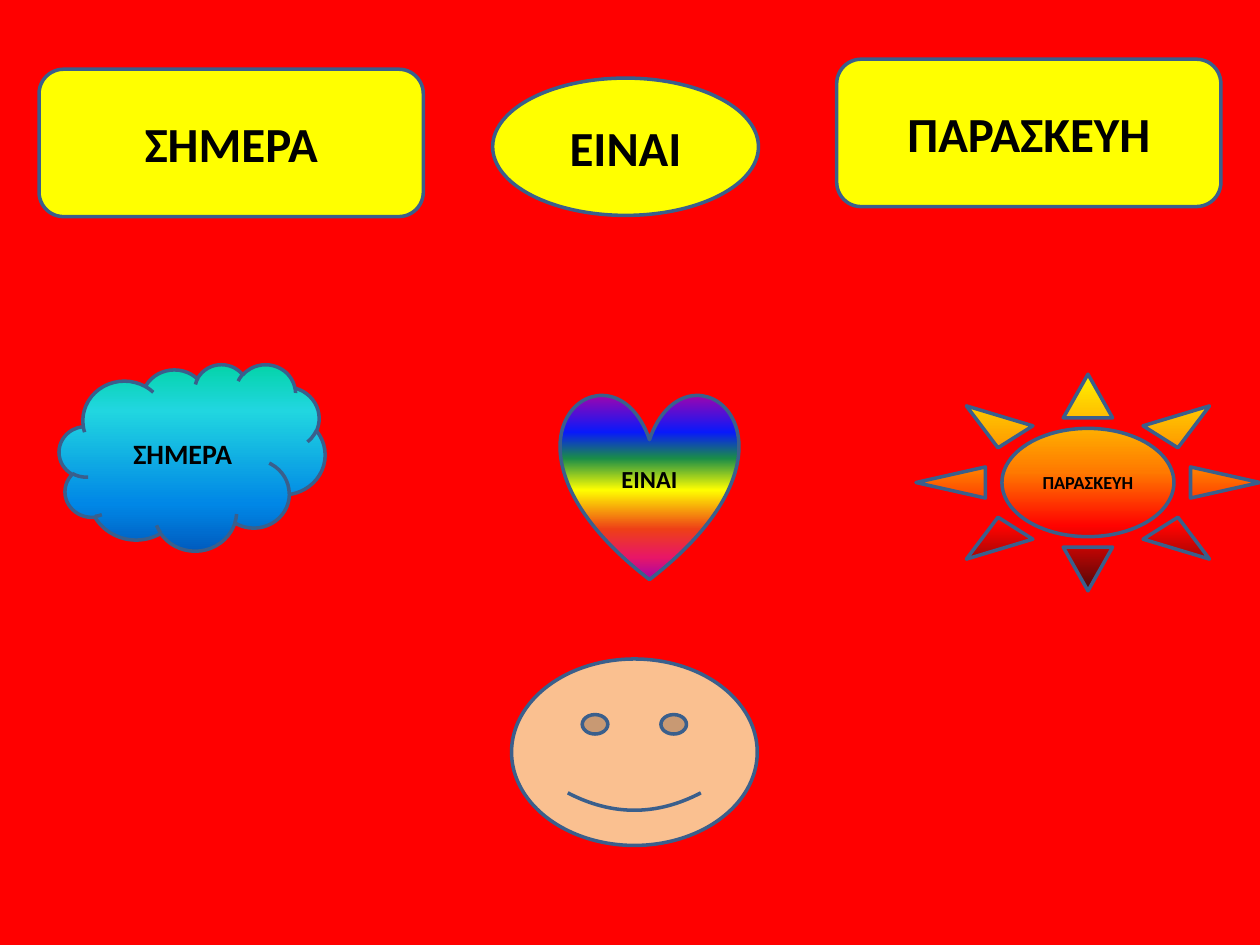
from lxml.etree import SubElement
from pptx import Presentation
from pptx.dml.color import RGBColor
from pptx.enum.shapes import MSO_SHAPE
from pptx.enum.text import MSO_ANCHOR, PP_ALIGN
from pptx.oxml.ns import qn
from pptx.util import Inches, Pt

COLORS = {
    "background": "FF0000",
    "card": "FFFF00",
    "face": "FAC090",
    "outline": "3A5F8C",
    "text": "000000",
}
# Gradient stops run from top to bottom: (percent, colour)
GRADIENTS = {
    "sky": [(0, "03D4A8"), (25, "21D6E0"), (75, "0087E6"), (100, "005CBF")],
    "rainbow": [(0, "A603AB"), (21, "0819FB"), (35, "1A8D48"), (52, "FFFF00"),
                (73, "EE3F17"), (88, "E81766"), (100, "A603AB")],
    "sunset": [(0, "FFF200"), (45, "FF7A00"), (70, "FF0300"), (100, "4D0808")],
}
TODAY, IS, FRIDAY = "ΣΗΜΕΡΑ", "ΕΙΝΑΙ", "ΠΑΡΑΣΚΕΥΗ"
CARD_SIZE = (30.5, 15.6)


class SlideBuilder:
    font = "Calibri"
    line_width = Pt(2)

    def __init__(self, presentation):
        self.width = presentation.slide_width
        self.height = presentation.slide_height
        self.slide = presentation.slides.add_slide(presentation.slide_layouts[6])

    def background(self, color):
        fill = self.slide.background.fill
        fill.solid()
        fill.fore_color.rgb = RGBColor.from_string(COLORS[color])

    def figure(self, preset, position, size, fill):
        """Add an outlined preset; position and size are percentages of the slide."""
        left, top = position
        width, height = size
        shape = self.slide.shapes.add_shape(
            preset,
            int(self.width * left / 100), int(self.height * top / 100),
            int(self.width * width / 100), int(self.height * height / 100))
        shape.shadow.inherit = False
        shape.line.color.rgb = RGBColor.from_string(COLORS["outline"])
        shape.line.width = self.line_width
        if fill in GRADIENTS:
            self.gradient(shape, GRADIENTS[fill])
        else:
            shape.fill.solid()
            shape.fill.fore_color.rgb = RGBColor.from_string(COLORS[fill])
        return shape

    def gradient(self, shape, stops):
        shape.fill.gradient()
        shape.fill.gradient_angle = 270
        stop_list = shape.element.spPr.find(qn("a:gradFill")).find(qn("a:gsLst"))
        for old_stop in list(stop_list):
            stop_list.remove(old_stop)
        for percent, color in stops:
            stop = SubElement(stop_list, qn("a:gs"), pos=str(percent * 1000))
            SubElement(stop, qn("a:srgbClr"), val=color)

    def word(self, preset, position, size, fill, text, points):
        """Add a figure with one bold word in its middle."""
        frame = self.figure(preset, position, size, fill).text_frame
        frame.vertical_anchor = MSO_ANCHOR.MIDDLE
        paragraph = frame.paragraphs[0]
        paragraph.alignment = PP_ALIGN.CENTER
        run = paragraph.add_run()
        run.text = text
        run.font.name = self.font
        run.font.size = Pt(points)
        run.font.bold = True
        run.font.color.rgb = RGBColor.from_string(COLORS["text"])


def main():
    presentation = Presentation()
    presentation.slide_width = Inches(10)
    presentation.slide_height = Inches(7.5)

    builder = SlideBuilder(presentation)
    builder.background("background")

    words = [
        (MSO_SHAPE.ROUNDED_RECTANGLE, (3.1, 7.33), CARD_SIZE, "card", TODAY, 28),
        (MSO_SHAPE.OVAL, (39.1, 8.27), (21.1, 14.53), "card", IS, 28),
        (MSO_SHAPE.ROUNDED_RECTANGLE, (66.4, 6.27), CARD_SIZE, "card", FRIDAY, 28),
        (MSO_SHAPE.CLOUD, (4.7, 38.53), (21.1, 19.73), "sky", TODAY, 16),
        (MSO_SHAPE.HEART, (44.5, 41.6), (14.1, 19.73), "rainbow", IS, 14),
        (MSO_SHAPE.SUN, (72.7, 39.6), (27.3, 22.93), "sunset", FRIDAY, 10.5),
    ]
    for word in words:
        builder.word(*word)
    builder.figure(MSO_SHAPE.SMILEY_FACE, (40.6, 69.73), (19.5, 19.73), "face")

    presentation.save("out.pptx")


if __name__ == "__main__":
    main()
